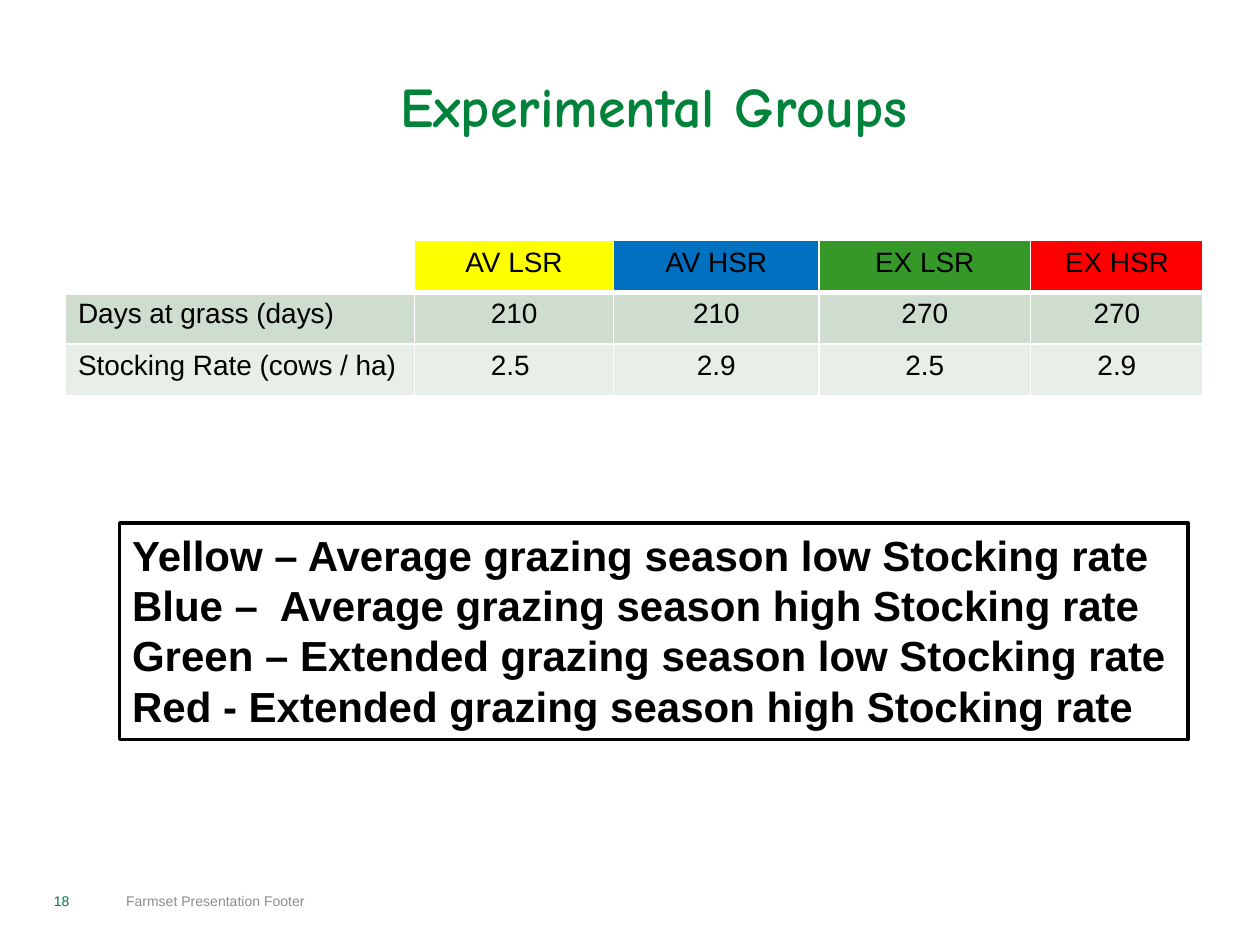
from lxml import etree
from pptx import Presentation
from pptx.dml.color import RGBColor
from pptx.enum.shapes import MSO_SHAPE
from pptx.enum.text import MSO_ANCHOR, MSO_AUTO_SIZE, PP_ALIGN
from pptx.oxml.ns import qn
from pptx.util import Inches, Pt

RECT = MSO_SHAPE.RECTANGLE
TOP, MIDDLE = MSO_ANCHOR.TOP, MSO_ANCHOR.MIDDLE
LEFT, CENTER = PP_ALIGN.LEFT, PP_ALIGN.CENTER
FIT_SHAPE = MSO_AUTO_SIZE.SHAPE_TO_FIT_TEXT

COLORS = {
    "white": "FFFFFF", "black": "000000", "grey": "8C8C8C",
    "title": "00823B", "number": "007944",
    "yellow": "FFFF00", "blue": "0070C0", "green": "359828", "red": "FF0000",
    "band_dark": "CEDDCD", "band_light": "E8EFE8",
}

COL_WIDTHS = [2.77, 1.58, 1.63, 1.68, 1.37]
ROW_HEIGHT = 0.41
# Each row: cell texts and cell fills
ROWS = [
    (["", "AV LSR", "AV HSR", "EX LSR", "EX HSR"],
     [None, "yellow", "blue", "green", "red"]),
    (["Days at grass (days)", "210", "210", "270", "270"], ["band_dark"] * 5),
    (["Stocking Rate (cows / ha)", "2.5 ", "2.9", "2.5", "2.9"], ["band_light"] * 5),
]
LEGEND = [
    "Yellow – Average grazing season low Stocking rate",
    "Blue –  Average grazing season high Stocking rate",
    "Green – Extended grazing season low Stocking rate",
    "Red - Extended grazing season high Stocking rate",
]


def rgb(name):
    return RGBColor.from_string(COLORS[name])


def write(tf, lines, size, color="black", font="Arial", bold=False,
          align=LEFT, spacing=None):
    for i, line in enumerate(lines):
        p = tf.add_paragraph() if i else tf.paragraphs[0]
        p.alignment = align
        if spacing:
            p.line_spacing = spacing
        r = p.add_run()
        r.text = line
        r.font.size = Pt(size)
        r.font.name = font
        r.font.bold = bold
        r.font.color.rgb = rgb(color)


def add_text(slide, box, text, size, color, anchor=TOP, wrap=True,
             left_inset=0.1, **style):
    tf = slide.shapes.add_textbox(*map(Inches, box)).text_frame
    tf.word_wrap = wrap
    tf.vertical_anchor = anchor
    tf.margin_left = Inches(left_inset)
    if not wrap:
        tf.auto_size = FIT_SHAPE
    write(tf, [text], size, color, **style)


def add_borders(cell, bottom):
    tc_pr = cell._tc.get_or_add_tcPr()
    for side, width in (("L", 1), ("R", 1), ("T", 1), ("B", bottom)):
        ln = etree.SubElement(tc_pr, qn(f"a:ln{side}"), w=str(Pt(width)))
        fill = etree.SubElement(ln, qn("a:solidFill"))
        etree.SubElement(fill, qn("a:srgbClr"), val=COLORS["white"])


def add_groups_table(slide, left, top):
    table = slide.shapes.add_table(
        len(ROWS), len(COL_WIDTHS), Inches(left), Inches(top),
        Inches(sum(COL_WIDTHS)), Inches(ROW_HEIGHT * len(ROWS))).table
    for col, width in zip(table.columns, COL_WIDTHS):
        col.width = Inches(width)
    for i, (texts, fills) in enumerate(ROWS):
        table.rows[i].height = Inches(ROW_HEIGHT)
        for j, (text, fill) in enumerate(zip(texts, fills)):
            cell = table.cell(i, j)
            add_borders(cell, bottom=1 if i else 3)
            if fill:
                cell.fill.solid()
                cell.fill.fore_color.rgb = rgb(fill)
            else:
                cell.fill.background()
            if text:
                write(cell.text_frame, [text], 16, align=CENTER if j else LEFT)


def add_legend(slide, box):
    sp = slide.shapes.add_shape(RECT, *map(Inches, box))
    sp.shadow.inherit = False
    sp.fill.solid()
    sp.fill.fore_color.rgb = rgb("white")
    sp.line.color.rgb = rgb("black")
    sp.line.width = Pt(2)
    tf = sp.text_frame
    tf.word_wrap = False
    tf.auto_size = FIT_SHAPE
    tf.vertical_anchor = TOP
    write(tf, LEGEND, 24, bold=True)


def main():
    prs = Presentation()
    prs.slide_width, prs.slide_height = Inches(10), Inches(7.5)
    slide = prs.slides.add_slide(prs.slide_layouts[6])

    # Footer and slide number
    add_text(slide, (1, 6.95, 7.18, 0.4), "Farmset Presentation Footer", 8,
             "grey", MIDDLE, left_inset=0)
    add_text(slide, (0.33, 6.95, 0.58, 0.4), "18", 8, "number", MIDDLE)

    # Groups table and colour legend
    add_groups_table(slide, 0.52, 1.91)
    add_legend(slide, (0.95, 4.15, 8.48, 1.72))

    # Title
    add_text(slide, (2.87, 0.62, 4.64, 0.54), "Experimental Groups", 32, "title",
             wrap=False, font="Comic Neue", bold=True, align=CENTER, spacing=0.8)

    prs.save("out.pptx")


if __name__ == "__main__":
    main()
